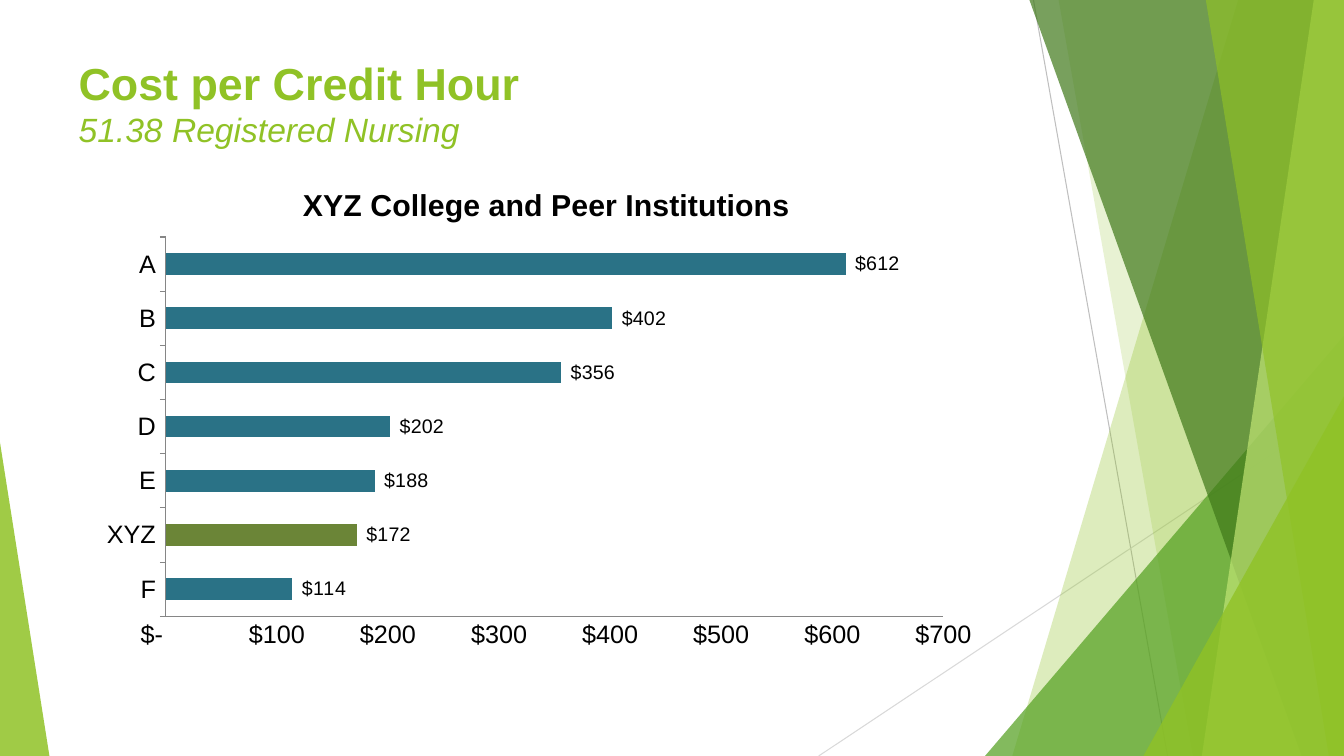
from dataclasses import dataclass

from lxml.etree import SubElement
from pptx import Presentation
from pptx.chart.data import CategoryChartData
from pptx.dml.color import RGBColor
from pptx.enum.chart import XL_CHART_TYPE as ChartType
from pptx.enum.chart import XL_LABEL_POSITION as LabelPosition
from pptx.enum.chart import XL_TICK_MARK as TickMark
from pptx.enum.shapes import MSO_CONNECTOR as Connector
from pptx.enum.shapes import MSO_SHAPE as Shape
from pptx.enum.text import MSO_ANCHOR as Anchor
from pptx.enum.text import MSO_AUTO_SIZE as AutoSize
from pptx.enum.text import PP_ALIGN as Align
from pptx.oxml import parse_xml
from pptx.oxml.ns import nsdecls, qn
from pptx.util import Inches, Pt


@dataclass(frozen=True)
class Theme:
    """Colours and type sizes of the deck."""
    font: str = "Arial"
    paper: str = "FFFFFF"
    ink: str = "000000"
    lime: str = "90C226"
    leaf: str = "54A021"
    forest: str = "3F7819"
    pale: str = "C0E474"
    bar: str = "2A7286"
    highlight: str = "6B8537"
    axis: str = "868686"
    ray_dark: str = "BFBFBF"
    ray_light: str = "D9D9D9"
    title: float = 32
    subtitle: float = 24
    chart_title: float = 21.6
    axis_label: float = 18
    value_label: float = 14


@dataclass(frozen=True)
class Box:
    """A region in one-inch columns and rows."""
    left: float
    top: float
    width: float
    height: float

    @property
    def right(self):
        """Return the right edge."""
        return self.left + self.width

    @property
    def bottom(self):
        """Return the bottom edge."""
        return self.top + self.height

    def frame(self):
        """Return left, top, width and height as lengths."""
        return [Inches(n) for n in (self.left, self.top, self.width, self.height)]


THEME = Theme()
PAGE = Box(0, 0, 13.33, 7.5)
TITLE = Box(0.68, 0.5, 9.4, 1.17)
CHART = Box(0.88, 1.59, 9, 4.95)
DOLLARS = '_("$"* #,##0_);_("$"* \\(#,##0\\);_("$"* "-"??_);_(@_)'
COSTS = {"F": 114, "XYZ": 172, "E": 188, "D": 202, "C": 356, "B": 402, "A": 612}


def rgb(value):
    """Return a colour from its hex text."""
    return RGBColor.from_string(value)


def style(font, size, color=THEME.ink, bold=False, italic=False):
    """Format a font."""
    font.name, font.size = THEME.font, Pt(size)
    font.bold, font.italic = bold, italic
    font.color.rgb = rgb(color)


def add_span(para, text, **look):
    """Add formatted text to a paragraph."""
    span = para.add_run()
    span.text = text
    style(span.font, **look)


def tint(shape, color, opacity):
    """Fill a shape with a translucent colour and no outline."""
    shape.shadow.inherit = False
    shape.fill.solid()
    shape.fill.fore_color.rgb = rgb(color)
    shape.line.fill.background()
    swatch = shape.fill._xPr.find(".//" + qn("a:srgbClr"))
    SubElement(swatch, qn("a:alpha")).set("val", str(opacity * 1000))


def add_ray(page, start, end, color):
    """Draw a thin line between two grid points."""
    ray = page.shapes.add_connector(
        Connector.STRAIGHT, *[Inches(n) for n in (*start, *end)])
    ray.line.color.rgb = rgb(color)
    ray.line.width = Pt(0.75)
    SubElement(ray._element.spPr, qn("a:effectLst"))


def add_pane(page, box, top_x, bottom_x, color, opacity):
    """Fill the box from a slanted edge to its right side."""
    points = [(top_x, box.top), (box.right, box.top),
              (box.right, box.bottom), (bottom_x, box.bottom)]
    points = [(Inches(x), Inches(y)) for x, y in points]
    builder = page.shapes.build_freeform(*points[0], scale=1.0)
    builder.add_line_segments(points[1:], close=True)
    tint(builder.convert_to_shape(), color, opacity)


def add_corner(page, box, peak, color, opacity):
    """Fill a right triangle with its peak at share 0 or 1 of the width."""
    corner = page.shapes.add_shape(Shape.ISOSCELES_TRIANGLE, *box.frame())
    corner.adjustments[0] = peak
    tint(corner, color, opacity)


def add_facets(page, box):
    """Draw the faceted decoration along the sides of the box."""
    def corner_box(width, height):
        """Return a box in the lower right corner."""
        return Box(box.right - width, box.bottom - height, width, height)

    add_ray(page, (10.25, box.top), (11.58, box.bottom), THEME.ray_dark)
    add_ray(page, (box.right, 4.03), (8.12, box.bottom), THEME.ray_light)
    add_pane(page, box, 12.28, 10.04, THEME.lime, 30)
    add_pane(page, box, 10.5, 11.83, THEME.lime, 20)
    add_corner(page, corner_box(3.56, 4.17), 1, THEME.leaf, 72)
    add_pane(page, box, 10.21, 12.91, THEME.forest, 70)
    add_pane(page, box, 13.03, 11.92, THEME.pale, 70)
    add_pane(page, box, 11.96, 13.18, THEME.lime, 65)
    add_corner(page, corner_box(1.99, 3.57), 1, THEME.lime, 80)
    add_corner(page, Box(box.left, box.bottom - 3.11, 0.49, 3.11), 0, THEME.lime, 85)


def add_title(page, box, heading, subheading):
    """Place the two-line heading in the title placeholder."""
    title = page.shapes.title
    title.left, title.top, title.width, title.height = box.frame()
    frame = title.text_frame
    frame.word_wrap, frame.auto_size = True, AutoSize.NONE
    frame.vertical_anchor = Anchor.TOP
    para = frame.paragraphs[0]
    para.alignment = Align.LEFT
    add_span(para, heading, size=THEME.title, color=THEME.lime, bold=True)
    para.add_line_break()
    add_span(para, subheading, size=THEME.subtitle, color=THEME.lime, italic=True)


def set_layout(parent, index, target="", **shares):
    """Place a chart part by shares of the chart's size."""
    for old in parent.findall(qn("c:layout")):
        parent.remove(old)
    inner = f'<c:layoutTarget val="{target}"/>' if target else ""
    modes = "".join(f'<c:{key}Mode val="edge"/>' for key in "xy")
    sizes = "".join(f'<c:{key} val="{share}"/>' for key, share in shares.items())
    parent.insert(index, parse_xml(
        f'<c:layout {nsdecls("c")}><c:manualLayout>{inner}{modes}{sizes}'
        "</c:manualLayout></c:layout>"))


def add_cost_chart(page, box, heading, costs, own):
    """Chart the costs as bars and highlight one institution."""
    data = CategoryChartData(number_format=DOLLARS)
    data.categories = list(costs)
    data.add_series("Series 1", list(costs.values()))
    chart = page.shapes.add_chart(ChartType.BAR_CLUSTERED, *box.frame(), data).chart
    style(chart.font, THEME.axis_label)
    chart.has_legend = False
    chart.has_title = True
    add_span(chart.chart_title.text_frame.paragraphs[0], heading,
             size=THEME.chart_title, bold=True)
    set_layout(chart.chart_title._element, 1, x=0.23, y=0.04)
    set_layout(chart._chartSpace.chart.plotArea, 0, "inner",
               x=0.085, y=0.154, w=0.857, h=0.76)

    plot = chart.plots[0]
    plot.gap_width, plot.vary_by_categories = 150, False
    series = plot.series[0]
    colors = {name: THEME.highlight if name == own else THEME.bar for name in costs}
    series.format.fill.solid()
    series.format.fill.fore_color.rgb = rgb(THEME.bar)
    point = series.points[list(costs).index(own)]
    point.format.fill.solid()
    point.format.fill.fore_color.rgb = rgb(colors[own])
    labels = series.data_labels
    labels.show_value, labels.position = True, LabelPosition.OUTSIDE_END
    labels.number_format, labels.number_format_is_linked = DOLLARS, False
    style(labels.font, THEME.value_label)

    values = chart.value_axis
    values.minimum_scale, values.maximum_scale, values.major_unit = 0, 700, 100
    values.tick_labels.number_format = DOLLARS
    values.tick_labels.number_format_is_linked = False
    for axis, tick in ((values, TickMark.NONE), (chart.category_axis, TickMark.OUTSIDE)):
        axis.has_major_gridlines = False
        axis.major_tick_mark, axis.minor_tick_mark = tick, TickMark.NONE
        axis.format.line.color.rgb = rgb(THEME.axis)
        axis.format.line.width = Pt(0.75)
        style(axis.tick_labels.font, THEME.axis_label)


def main():
    """Build and save the deck."""
    deck = Presentation()
    deck.slide_width, deck.slide_height = PAGE.frame()[2:]
    page = deck.slides.add_slide(deck.slide_layouts[5])
    page.background.fill.solid()
    page.background.fill.fore_color.rgb = rgb(THEME.paper)
    add_facets(page, PAGE)
    add_title(page, TITLE, "Cost per Credit Hour", "51.38 Registered Nursing")
    add_cost_chart(page, CHART, "XYZ College and Peer Institutions", COSTS, "XYZ")
    deck.save("out.pptx")


if __name__ == "__main__":
    main()
